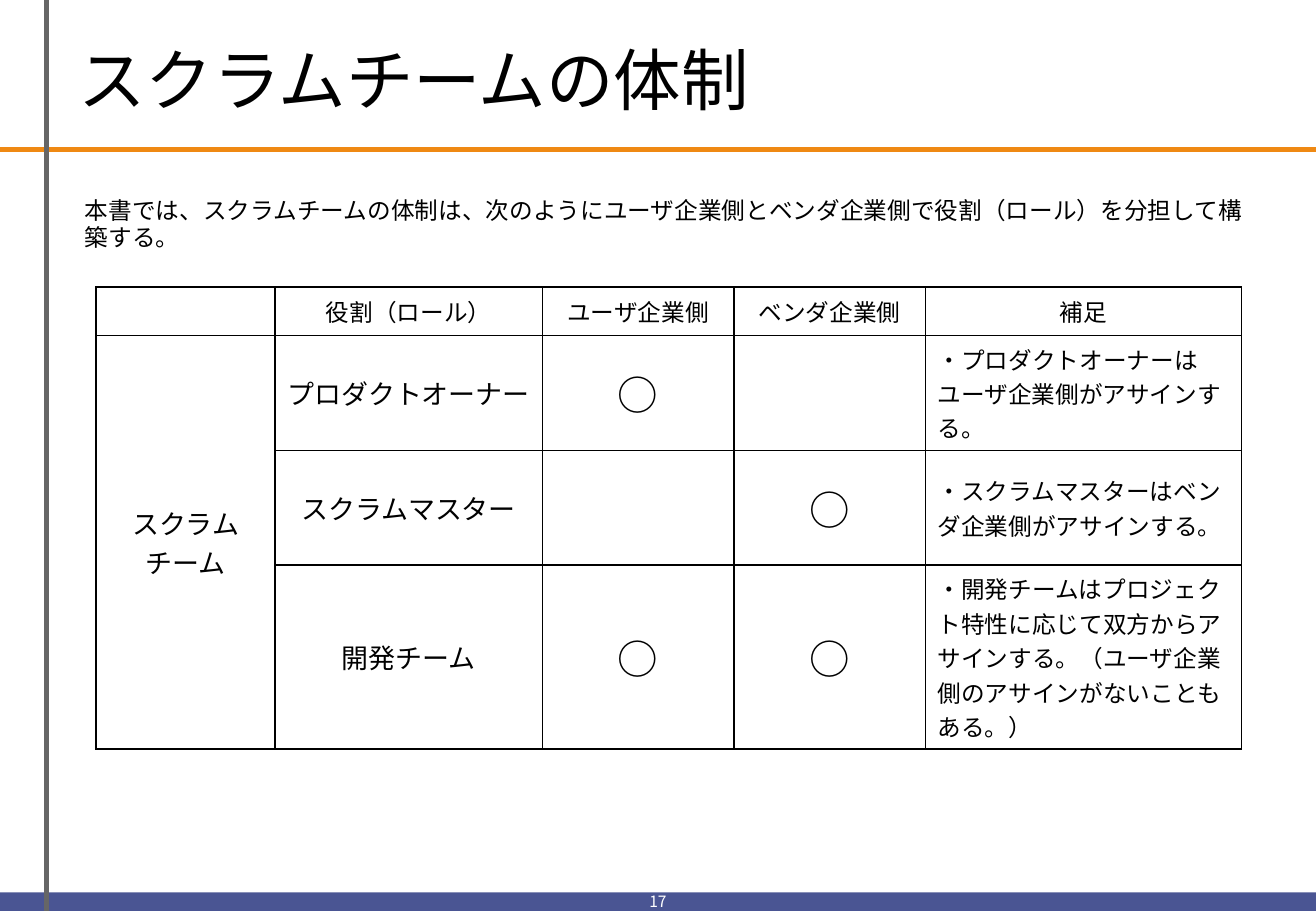
from pptx import Presentation
from pptx.dml.color import RGBColor
from pptx.enum.shapes import MSO_CONNECTOR as Conn, MSO_SHAPE as Shape
from pptx.enum.text import MSO_ANCHOR as Anchor, PP_ALIGN as Align
from pptx.oxml import parse_xml
from pptx.oxml.ns import nsdecls, qn
from pptx.util import Pt
from lxml.etree import SubElement

BLACK = RGBColor(0x00, 0x00, 0x00)
WHITE = RGBColor(0xFF, 0xFF, 0xFF)
ORANGE = RGBColor(0xEF, 0x89, 0x13)
BLUE = RGBColor(0x4A, 0x55, 0x93)
GREY = RGBColor(0x66, 0x66, 0x66)
FONT = "Noto Sans CJK JP"
WIDE, HIGH = 780, 540

INTRO = "本書では、スクラムチームの体制は、次のようにユーザ企業側とベンダ企業側で役割（ロール）を分担して構築する。"
COLS = [106, 158.5, 113.5, 113.5, 187.5]
ROWS = [27.8, 68.2, 68, 109]
CELLS = [
    ["", "役割（ロール）", "ユーザ企業側", "ベンダ企業側", "補足"],
    ["スクラムチーム", "プロダクトオーナー", "○", "",
     "・プロダクトオーナーはユーザ企業側がアサインする。"],
    ["", "スクラムマスター", "", "○",
     "・スクラムマスターはベンダ企業側がアサインする。"],
    ["", "開発チーム", "○", "○",
     "・開発チームはプロジェクト特性に応じて双方からアサインする。（ユーザ企業側のアサインがないこともある。）"],
]

HEAD = {"size": 14, "align": Align.CENTER}
ROLE = {"size": 16, "align": Align.CENTER}
MARK = {"size": 24, "align": Align.CENTER}
NOTE = {"size": 14, "align": Align.LEFT}
BODY = [ROLE, ROLE, MARK, MARK, NOTE]


def assign(item, form):
    for name, value in form.items():
        setattr(item, name, value)


def write(frame, text, size, color=BLACK, align=Align.LEFT, space=None):
    para = frame.paragraphs[0]
    assign(para, {"alignment": align, "line_spacing": space})
    run = para.add_run()
    run.text = text
    assign(run.font, {"name": FONT, "size": Pt(size)})
    run.font.color.rgb = color
    SubElement(run.font._element, qn("a:ea"), typeface=FONT)


def label(slide, box, text, anchor, **form):
    frame = slide.shapes.add_textbox(*map(Pt, box)).text_frame
    assign(frame, {"word_wrap": True, "vertical_anchor": anchor})
    write(frame, text, **form)


def rule(slide, ends, color):
    line = slide.shapes.add_connector(Conn.STRAIGHT, *map(Pt, ends))
    line.line.width = Pt(3)
    line.line.color.rgb = color
    SubElement(line._element.spPr, qn("a:effectLst"))


def band(slide, box, color):
    shape = slide.shapes.add_shape(Shape.RECTANGLE, *map(Pt, box))
    shape.shadow.inherit = False
    shape.fill.solid()
    shape.fill.fore_color.rgb = color
    shape.line.fill.background()


def border(cell):
    props = cell._tc.get_or_add_tcPr()
    for index, side in enumerate("LRTB"):
        props.insert(index, parse_xml(
            f'<a:ln{side} {nsdecls("a")} w="{Pt(1)}"><a:solidFill>'
            f'<a:srgbClr val="{BLACK}"/></a:solidFill></a:ln{side}>'))


def fill(cell, text, form):
    cell.fill.solid()
    cell.fill.fore_color.rgb = WHITE
    cell.vertical_anchor = Anchor.MIDDLE
    if form is MARK:
        assign(cell, {"margin_left": Pt(3), "margin_right": Pt(3)})
    write(cell.text_frame, text, **(form if text else HEAD))
    border(cell)


def roles(slide, left, top):
    size = len(ROWS), len(COLS)
    box = left, top, sum(COLS), sum(ROWS)
    table = slide.shapes.add_table(*size, *map(Pt, box)).table
    assign(table, {"first_row": False, "horz_banding": False})
    for col, width in zip(table.columns, COLS):
        col.width = Pt(width)
    for row, height in zip(table.rows, ROWS):
        row.height = Pt(height)
    for r, texts in enumerate(CELLS):
        for c, text in enumerate(texts):
            fill(table.cell(r, c), text, BODY[c] if r else HEAD)
    table.cell(1, 0).merge(table.cell(3, 0))


def main():
    deck = Presentation()
    assign(deck, {"slide_width": Pt(WIDE), "slide_height": Pt(HIGH)})
    slide = deck.slides.add_slide(deck.slide_layouts[6])
    rule(slide, (0, 88.5, WIDE, 88.5), ORANGE)
    band(slide, (0, 529, WIDE, 11), BLUE)
    rule(slide, (27.5, 0, 27.5, HIGH), GREY)
    label(slide, (39.5, 9.5, 706, 73.5), "スクラムチームの体制", Anchor.MIDDLE, size=40)
    label(slide, (363.5, 525.5, 53, 18), "17", Anchor.BOTTOM,
          size=9.2, color=WHITE, align=Align.CENTER)
    roles(slide, 57, 170)
    label(slide, (43.2, 114, 708, 40), INTRO, Anchor.TOP, size=14, space=0.95)
    deck.save("out.pptx")


if __name__ == "__main__":
    main()
